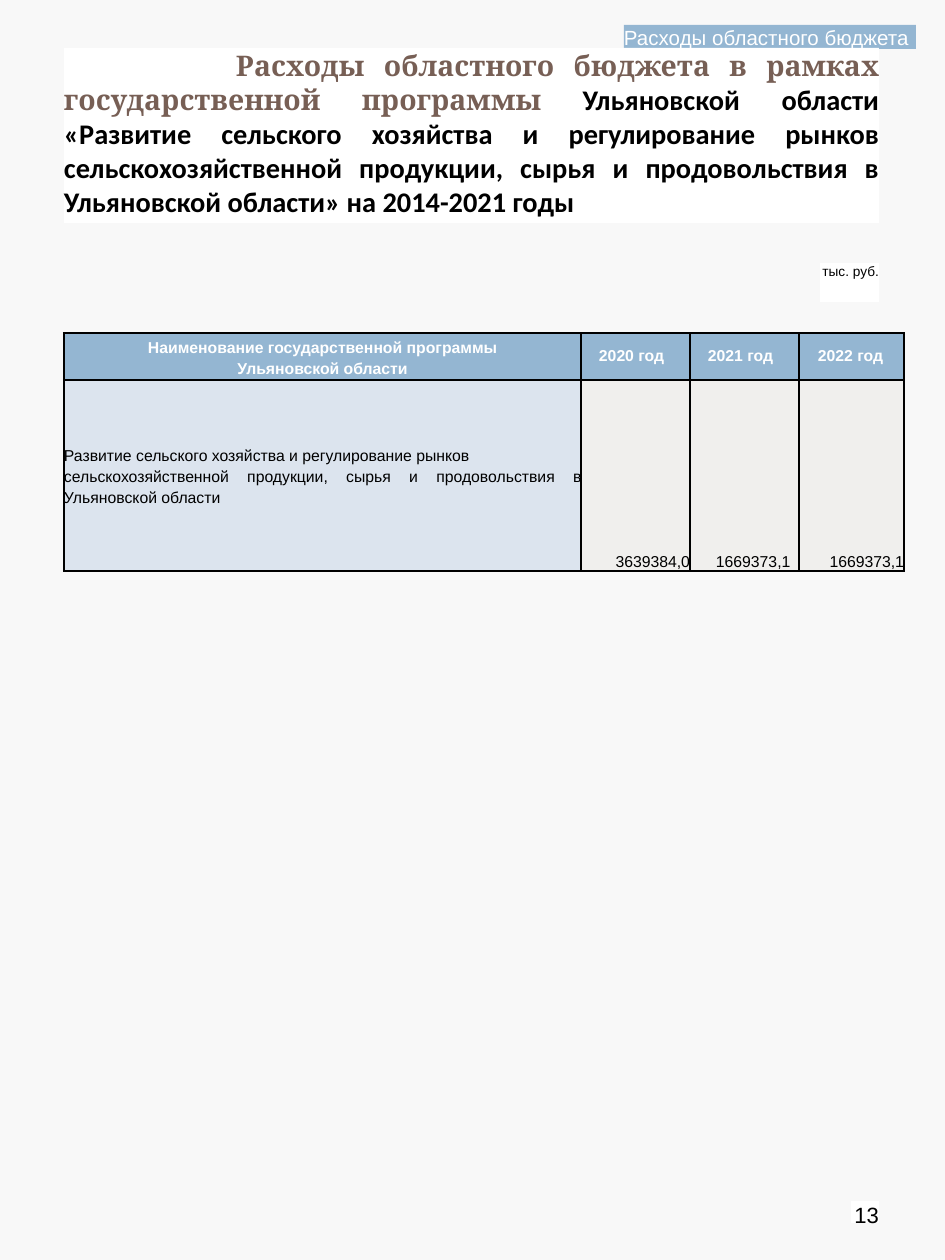
from lxml import etree
from pptx import Presentation
from pptx.dml.color import RGBColor
from pptx.enum.shapes import MSO_SHAPE
from pptx.enum.text import MSO_ANCHOR, PP_ALIGN
from pptx.oxml.ns import qn
from pptx.util import Emu, Pt

PX = 914400 / 126
RECTANGLE = MSO_SHAPE.RECTANGLE
TOP, MIDDLE, BOTTOM = MSO_ANCHOR.TOP, MSO_ANCHOR.MIDDLE, MSO_ANCHOR.BOTTOM
LEFT, CENTER, RIGHT, JUSTIFY = (PP_ALIGN.LEFT, PP_ALIGN.CENTER,
                                PP_ALIGN.RIGHT, PP_ALIGN.JUSTIFY)
COLORS = {
    "page": "F8F8F8", "white": "FFFFFF", "black": "000000",
    "blue": "94B6D2", "brown": "775F55",
    "name": "DCE4EE", "value": "F0EFED",
}


def px(length):
    return Emu(round(length * PX))


def color(name):
    return RGBColor.from_string(COLORS[name])


class SlideBuilder:
    def __init__(self, slide):
        self.slide = slide
        slide.background.fill.solid()
        slide.background.fill.fore_color.rgb = color("page")

    def style_run(self, run, size, ink="black", face="Arial", bold=False):
        run.font.size = Pt(size)
        run.font.name = face
        run.font.bold = bold
        run.font.color.rgb = color(ink)

    def format_paragraph(self, paragraph, align, indent=0, spacing=None):
        paragraph.alignment = align
        if indent:
            properties = paragraph._p.get_or_add_pPr()
            properties.set("marL", "0")
            properties.set("indent", str(px(indent)))
        if spacing:
            paragraph.line_spacing = spacing

    def box(self, left, top, width, height, runs, fill="white",
            align=LEFT, indent=0):
        """Filled rectangle; runs are (text, style) pairs."""
        shape = self.slide.shapes.add_shape(
            RECTANGLE, px(left), px(top), px(width), px(height))
        shape.shadow.inherit = False
        shape.fill.solid()
        shape.fill.fore_color.rgb = color(fill)
        shape.line.fill.background()
        frame = shape.text_frame
        frame.word_wrap = True
        frame.vertical_anchor = TOP
        frame.margin_left = frame.margin_right = 0
        frame.margin_top = frame.margin_bottom = 0
        paragraph = frame.paragraphs[0]
        self.format_paragraph(paragraph, align, indent)
        for text, style in runs:
            run = paragraph.add_run()
            run.text = text
            self.style_run(run, **style)

    def table(self, left, top, columns, rows):
        frame = self.slide.shapes.add_table(
            len(rows), len(columns), px(left), px(top),
            px(sum(columns)), px(sum(rows)))
        table = frame.table
        for column, width in zip(table.columns, columns):
            column.width = px(width)
        for row, height in zip(table.rows, rows):
            row.height = px(height)
        return table

    def cell(self, cell, text, fill, anchor, align, indent=0, spacing=None,
             ink="black", bold=False):
        cell.margin_left = cell.margin_right = 0
        cell.margin_top = cell.margin_bottom = 0
        cell.vertical_anchor = anchor
        cell.text_frame.text = text
        for paragraph in cell.text_frame.paragraphs:
            self.format_paragraph(paragraph, align, indent, spacing)
            for run in paragraph.runs:
                self.style_run(run, 9, ink, bold=bold)
        # Borders must precede the fill in the cell properties
        properties = cell._tc.get_or_add_tcPr()
        for side, width in (("lnL", 1.5), ("lnR", 1.5),
                            ("lnT", 1), ("lnB", 1)):
            line = etree.SubElement(properties, qn("a:" + side),
                                    w=str(Pt(width)))
            solid = etree.SubElement(line, qn("a:solidFill"))
            etree.SubElement(solid, qn("a:srgbClr"), val=COLORS["black"])
        cell.fill.solid()
        cell.fill.fore_color.rgb = color(fill)


def main():
    presentation = Presentation()
    presentation.slide_width = px(945)
    presentation.slide_height = px(1260)
    slide = presentation.slides.add_slide(presentation.slide_layouts[6])
    builder = SlideBuilder(slide)

    # Section label and title
    builder.box(624, 25, 292, 24,
                [("Расходы областного бюджета", dict(size=11.7, ink="white"))],
                fill="blue")
    builder.box(64, 48, 815, 175, [
        ("Расходы областного бюджета в рамках государственной программы ",
         dict(size=16.2, ink="brown", face="Cambria", bold=True)),
        ("Ульяновской области «Развитие сельского хозяйства и регулирование "
         "рынков сельскохозяйственной продукции, сырья и продовольствия в "
         "Ульяновской области» на 2014-2021 годы",
         dict(size=16.2, face="Calibri", bold=True)),
    ], align=JUSTIFY, indent=172)
    builder.box(820, 263, 59, 39, [("тыс. руб.", dict(size=7.8))], align=RIGHT)

    # Spending table
    table = builder.table(64, 333, [517, 109, 109, 105], [47, 191])
    header = dict(fill="blue", anchor=MIDDLE, ink="white", bold=True)
    builder.cell(table.cell(0, 0),
                 "Наименование государственной программы\vУльяновской области",
                 align=CENTER, spacing=1.21, **header)
    builder.cell(table.cell(1, 0),
                 "Развитие сельского хозяйства и регулирование рынков\n"
                 "сельскохозяйственной продукции, сырья и продовольствия в\v"
                 "Ульяновской области",
                 "name", MIDDLE, JUSTIFY, spacing=1.18)
    years = [
        ("2020 год", 18, "3639384,0", RIGHT, 0),
        ("2021 год", 18, "1669373,1", JUSTIFY, 26),
        ("2022 год", 19, "1669373,1", RIGHT, 0),
    ]
    for column, (year, year_indent, value, align, indent) in enumerate(years, 1):
        builder.cell(table.cell(0, column), year, align=LEFT,
                     indent=year_indent, **header)
        builder.cell(table.cell(1, column), value, "value", BOTTOM, align,
                     indent)

    # Page number
    builder.box(851, 1201, 28, 22, [("13", dict(size=12.6))], align=RIGHT)

    presentation.save("out.pptx")


if __name__ == "__main__":
    main()
